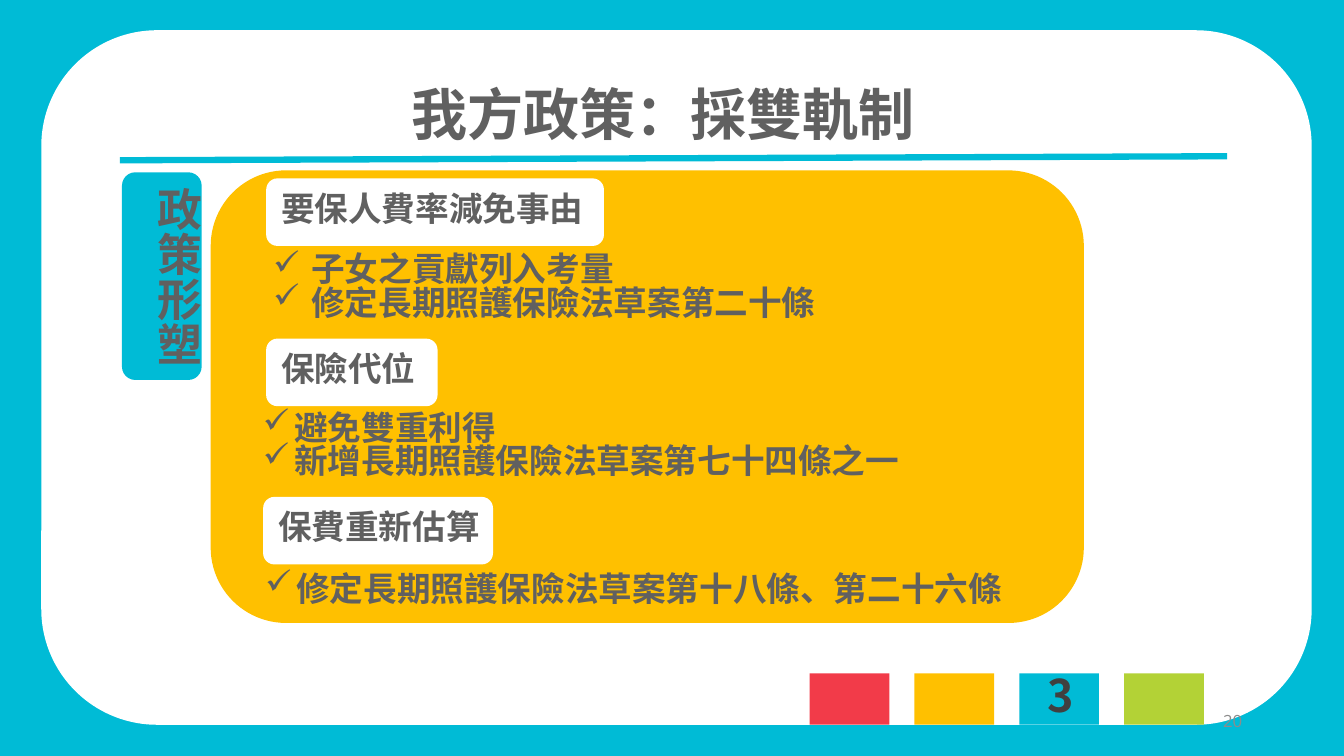
from lxml import etree
from pptx import Presentation
from pptx.dml.color import RGBColor
from pptx.enum.shapes import MSO_CONNECTOR, MSO_SHAPE
from pptx.enum.text import MSO_ANCHOR, PP_ALIGN
from pptx.oxml.ns import qn
from pptx.util import Pt

PX = 9144
TEAL = RGBColor(0x00, 0xBB, 0xD6)
AMBER = RGBColor(0xFF, 0xC0, 0x00)
RED = RGBColor(0xF2, 0x3B, 0x49)
GREEN = RGBColor(0xB3, 0xD2, 0x36)
WHITE = RGBColor(0xFF, 0xFF, 0xFF)
GREY = RGBColor(0x60, 0x60, 0x60)
DARK = RGBColor(0x40, 0x40, 0x40)
PALE = RGBColor(0x8C, 0x8C, 0x8C)
CJK = "Noto Sans CJK SC"
LATIN = "Open Sans"
ROUND = MSO_SHAPE.ROUNDED_RECTANGLE
RECT = MSO_SHAPE.RECTANGLE
STRAIGHT = MSO_CONNECTOR.STRAIGHT
MIDDLE = MSO_ANCHOR.MIDDLE
RIGHT = PP_ALIGN.RIGHT


def scaled(*lengths):
    """Turn px into EMU."""
    return [length * PX for length in lengths]


def add_block(slide, kind, box, color):
    """Add a plain filled shape."""
    shape = slide.shapes.add_shape(kind, *scaled(*box))
    shape.shadow.inherit = False
    shape.fill.solid()
    shape.fill.fore_color.rgb = color
    shape.line.fill.background()


def add_text(slide, box, lines, size, color=GREY, indent=0):
    """Add bold lines of text, with check bullets if indented."""
    textbox = slide.shapes.add_textbox(*scaled(*box))
    frame = textbox.text_frame
    frame.word_wrap = True
    frame.margin_top = (5 + size // 10) * PX
    frame.text = "\n".join(lines)
    for paragraph in frame.paragraphs:
        paragraph.line_spacing = 0.83
        font = paragraph.font
        font.size = Pt(size)
        font.bold = True
        font.color.rgb = color
        font.name = CJK
        properties = paragraph._p.get_or_add_pPr()
        defaults = properties.find(qn("a:defRPr"))
        etree.SubElement(defaults, qn("a:ea"), typeface=CJK)
        if indent:
            properties.set("marL", str(indent * PX))
            properties.set("indent", str(-indent * PX))
            bullet = etree.Element(qn("a:buChar"), char="✓")
            defaults.addprevious(bullet)
    return textbox


def add_title(slide, left, top):
    """Add the heading and the rule below it."""
    add_text(slide, (left + 279, top, 539, 77), ["我方政策：採雙軌制"], 40)
    rule = slide.shapes.add_connector(
        STRAIGHT, *scaled(left, top + 78, left + 1098, top + 74))
    rule.line.color.rgb = TEAL
    rule.line.width = Pt(4.5)
    etree.SubElement(rule._element.spPr, qn("a:effectLst"))


def add_side_tab(slide, left, top):
    """Add the tab with vertical text."""
    add_block(slide, ROUND, (left, top, 79, 206), TEAL)
    textbox = add_text(slide, (left + 4, top + 7, 74, 360), ["政策形塑"], 32)
    textbox.text_frame._txBody.bodyPr.set("vert", "eaVert")


def add_policy(slide, left, top, width, heading, points, body, indent):
    """Add a white heading label and its checked points."""
    add_block(slide, ROUND, (left, top, width, 67), WHITE)
    add_text(slide, (left + 5, top + 9, width - 5, 50), [heading], 24)
    add_text(slide, body, points, 24, indent=indent)


def add_panel(slide, left, top):
    """Add the amber panel with three policies."""
    add_block(slide, ROUND, (left, top, 866, 449), AMBER)
    policies = [
        (55, 8, 335, "要保人費率減免事由",
         ["子女之貢獻列入考量", "修定長期照護保險法草案第二十條"],
         (52, 77, 797, 91), 38),
        (55, 167, 170, "保險代位",
         ["避免雙重利得", "新增長期照護保險法草案第七十四條之一"],
         (42, 234, 666, 91), 31),
        (52, 324, 228, "保費重新估算",
         ["修定長期照護保險法草案第十八條、第二十六條"],
         (44, 394, 778, 50), 31),
    ]
    for x, y, width, heading, points, (bx, by, bw, bh), indent in policies:
        add_policy(slide, left + x, top + y, width, heading, points,
                   (left + bx, top + by, bw, bh), indent)


def add_progress(slide, left, top):
    """Add the row of section squares, with the current number."""
    step = 104
    for index, color in enumerate((RED, AMBER, TEAL, GREEN)):
        add_block(slide, RECT, (left + index * step, top, 79, 51), color)
    add_text(slide, (left + 2 * step + 18, top - 5, 45, 64), ["3"], 32, DARK)


def add_page_number(slide, left, top):
    """Add the page number."""
    frame = slide.shapes.add_textbox(*scaled(left, top, 300, 40)).text_frame
    frame.word_wrap = True
    frame.vertical_anchor = MIDDLE
    frame.text = "20"
    paragraph = frame.paragraphs[0]
    paragraph.alignment = RIGHT
    paragraph.font.size = Pt(12)
    paragraph.font.name = LATIN
    paragraph.font.color.rgb = PALE


def main():
    """Build the slide and save it."""
    presentation = Presentation()
    presentation.slide_width, presentation.slide_height = scaled(1333, 750)
    slide = presentation.slides.add_slide(presentation.slide_layouts[6])
    slide.background.fill.solid()
    slide.background.fill.fore_color.rgb = TEAL
    add_block(slide, ROUND, (41, 30, 1260, 689), WHITE)
    add_page_number(slide, 942, 695)
    add_title(slide, 119, 81)
    add_side_tab(slide, 121, 171)
    add_panel(slide, 209, 169)
    add_progress(slide, 803, 668)
    presentation.save("out.pptx")


if __name__ == "__main__":
    main()
